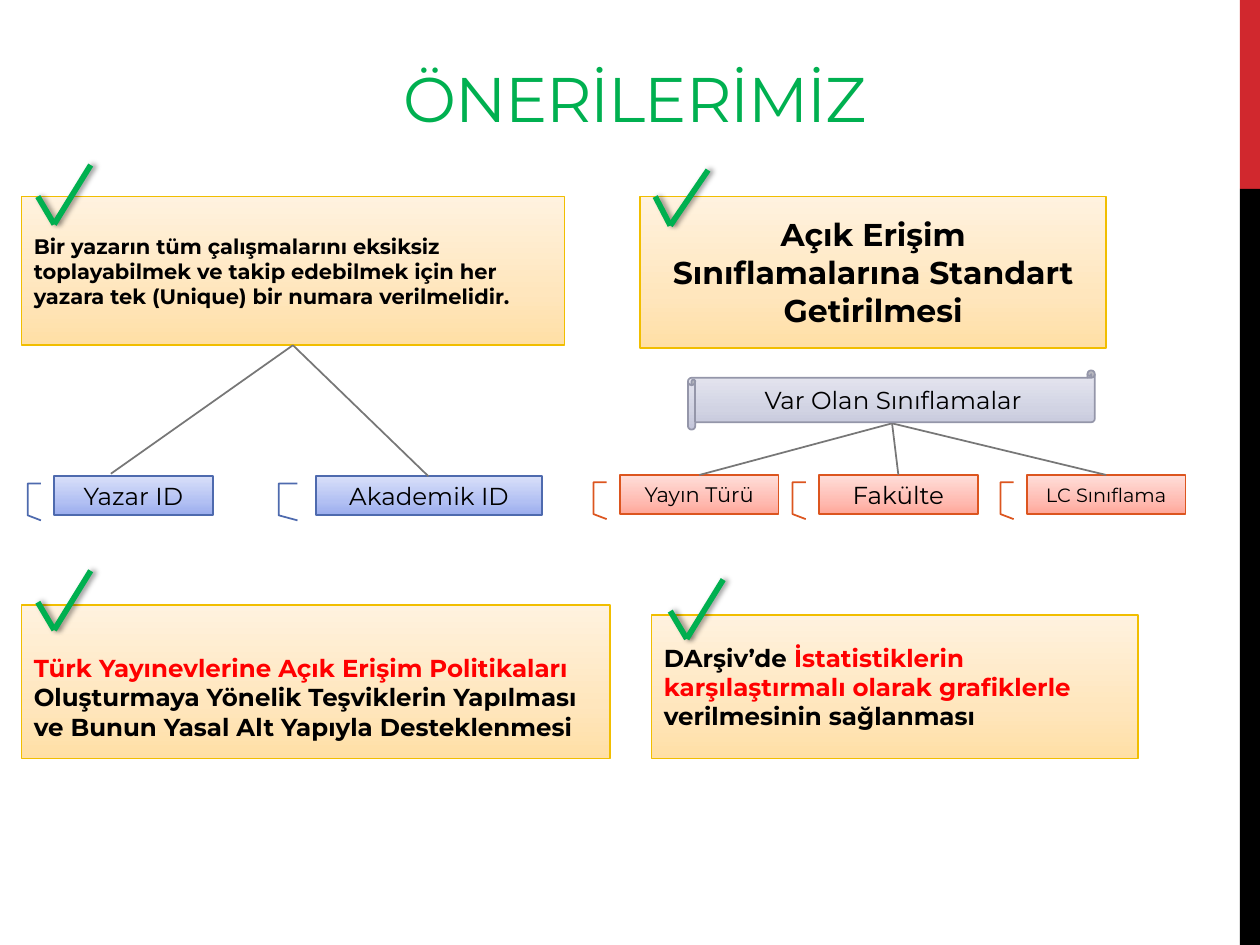
from copy import deepcopy

from lxml import etree
from pptx import Presentation
from pptx.dml.color import RGBColor
from pptx.enum import shapes, text
from pptx.oxml import ns
from pptx.util import Inches, Pt

FONT = "Montserrat"
BLACK, GREEN, RED, GREY = "000000", "00B050", "FF0000", "777777"
# Each palette: gradient from bottom to top, then the outline
AMBER = ("FFDFA5", "FFE6BD", "FFF2DF"), "F1BE00"
CORAL = ("FFA698", "FFBCB3", "FFDED9"), "DC551F"
BLUE = ("9AACED", "B2C0F3", "D8DFF9"), "4E6AAE"
LILAC = ("C3C5D9", "D1D3E3", "E8E8F1"), "9496A9"
RECTANGLE = shapes.MSO_SHAPE.RECTANGLE
CALLOUT = shapes.MSO_SHAPE.LINE_CALLOUT_3
SCROLL = shapes.MSO_SHAPE.HORIZONTAL_SCROLL
LEFT, CENTER = text.PP_ALIGN.LEFT, text.PP_ALIGN.CENTER


def color(value):
    return RGBColor.from_string(value)


def fill_gradient(shape, colors):
    shape.fill.gradient()
    shape.fill.gradient_angle = 90
    stops = shape.fill.gradient_stops
    stop_list = stops[0]._gs.getparent()
    stop_list.insert(1, deepcopy(stop_list[0]))
    for stop, value, position in zip(shape.fill.gradient_stops, colors, (0, 0.35, 1)):
        stop.color.rgb = color(value)
        stop.position = position


def write(frame, parts, size, align, bold=False):
    """Write one paragraph made of (text, colour) parts."""
    frame.word_wrap = True
    frame.vertical_anchor = text.MSO_ANCHOR.MIDDLE
    paragraph = frame.paragraphs[0]
    paragraph.alignment = align
    font = paragraph.font
    font.name, font.size, font.bold = FONT, Pt(size), bold
    for words, value in parts:
        run = paragraph.add_run()
        run.text = words
        run.font.color.rgb = color(value)
    return paragraph


def add_panel(slide, kind, box, palette, parts, size, align=CENTER, bold=False):
    shape = slide.shapes.add_shape(kind, *map(Inches, box))
    shape.shadow.inherit = False
    colors, outline = palette
    fill_gradient(shape, colors)
    shape.line.color.rgb = color(outline)
    shape.line.width = Pt(1)
    write(shape.text_frame, parts, size, align, bold)
    return shape


def add_line(slide, start, end, value=GREY, width=1, shadow=False):
    line = slide.shapes.add_connector(
        shapes.MSO_CONNECTOR.STRAIGHT, *map(Inches, (*start, *end)))
    line.line.color.rgb = color(value)
    line.line.width = Pt(width)
    effects = etree.SubElement(line._element.spPr, ns.qn("a:effectLst"))
    if shadow:
        outer = etree.SubElement(effects, ns.qn("a:outerShdw"), blurRad=str(Pt(3.1)),
                                 dist=str(Pt(1.8)), dir="0", rotWithShape="0")
        black = etree.SubElement(outer, ns.qn("a:srgbClr"), val=BLACK)
        etree.SubElement(black, ns.qn("a:alpha"), val="40000")


def add_check(slide, corner, short=(-0.13, -0.22), long=(0.29, -0.47)):
    """Draw a tick whose two strokes meet at the corner."""
    x, y = corner
    for dx, dy in (short, long):
        add_line(slide, (x + dx, y + dy), corner, GREEN, 3.25, shadow=True)


def add_branches(slide, root, ends):
    for end in ends:
        add_line(slide, root, end)


def add_side_bar(slide, box):
    left, top, width, height = box
    red_height = height / 5
    for y, h, value in ((top, red_height, "D1282E"),
                        (top + red_height, height - red_height, BLACK)):
        bar = slide.shapes.add_shape(RECTANGLE, *map(Inches, (left, y, width, h)))
        bar.shadow.inherit = False
        bar.fill.solid()
        bar.fill.fore_color.rgb = color(value)
        bar.line.fill.background()


def add_title(slide, box):
    frame = slide.shapes.add_textbox(*map(Inches, box)).text_frame
    paragraph = write(frame, [("ÖNERİLERİMİZ", GREEN)], 36, CENTER)
    frame.vertical_anchor = text.MSO_ANCHOR.BOTTOM
    paragraph.runs[0].font._element.set("spc", "-60")


def add_author_ids(slide, box):
    left, top, width, height = box
    add_panel(slide, RECTANGLE, box, AMBER, [(
        "Bir yazarın tüm çalışmalarını eksiksiz toplayabilmek ve takip edebilmek "
        "için her yazara tek (Unique) bir numara verilmelidir.", BLACK)], 12, LEFT, True)
    row = top + 2.22
    for label, x, w in (("Yazar ID", 0.26, 1.26), ("Akademik ID", 2.34, 1.79)):
        add_panel(slide, CALLOUT, (left + x, row, w, 0.31), BLUE, [(label, BLACK)], 14)
    add_branches(slide, (left + width / 2, top + height),
                 [(left + 0.71, row - 0.02), (left + 3.23, row)])
    add_check(slide, (left + 0.26, top + 0.22))


def add_classifications(slide, box):
    left, top, width, height = box
    add_panel(slide, RECTANGLE, box, AMBER, [(
        "Açık Erişim Sınıflamalarına Standart Getirilmesi", BLACK)], 18, bold=True)
    row = top + 2.21
    for label, x, size in (("Yayın Türü", -0.16, 12), ("Fakülte", 1.42, 14),
                           ("LC Sınıflama", 3.07, 11)):
        add_panel(slide, CALLOUT, (left + x, row, 1.26, 0.31), CORAL,
                  [(label, BLACK)], size)
    add_branches(slide, (left + 2, top + 1.8),
                 [(left + x, row) for x in (0.47, 2.05, 3.7)])
    add_panel(slide, SCROLL, (left + 0.38, top + 1.38, 3.23, 0.47), LILAC,
              [("Var Olan Sınıflamalar", BLACK)], 14)
    add_check(slide, (left + 0.24, top + 0.23), (-0.12, -0.23), (0.3, -0.44))


def add_policies(slide, box):
    left, top, width, height = box
    panel = add_panel(slide, RECTANGLE, box, AMBER, [
        ("Türk Yayınevlerine Açık Erişim Politikaları ", RED),
        ("Oluşturmaya Yönelik Teşviklerin Yapılması ve Bunun Yasal Alt Yapıyla "
         "Desteklenmesi", BLACK)], 14, LEFT, True)
    panel.text_frame.margin_top = Inches(0.29)
    add_check(slide, (left + 0.26, top + 0.2))


def add_statistics(slide, box):
    left, top, width, height = box
    add_panel(slide, RECTANGLE, box, AMBER, [
        ("DArşiv’de ", BLACK),
        ("İstatistiklerin karşılaştırmalı olarak grafiklerle ", RED),
        ("verilmesinin sağlanması", BLACK)], 14, LEFT, True)
    add_check(slide, (left + 0.28, top + 0.19))


def main():
    presentation = Presentation()
    presentation.slide_width, presentation.slide_height = Inches(10), Inches(7.5)
    slide = presentation.slides.add_slide(presentation.slide_layouts[6])
    add_side_bar(slide, (9.84, 0, 0.16, 7.5))
    add_title(slide, (0.43, 0.21, 9.22, 0.91))
    # Upper row: each panel with the tree below it
    add_author_ids(slide, (0.17, 1.56, 4.31, 1.18))
    add_classifications(slide, (5.08, 1.56, 3.7, 1.2))
    # Lower row
    add_policies(slide, (0.17, 4.8, 4.67, 1.22))
    add_statistics(slide, (5.17, 4.88, 3.86, 1.14))
    presentation.save("out.pptx")


if __name__ == "__main__":
    main()
